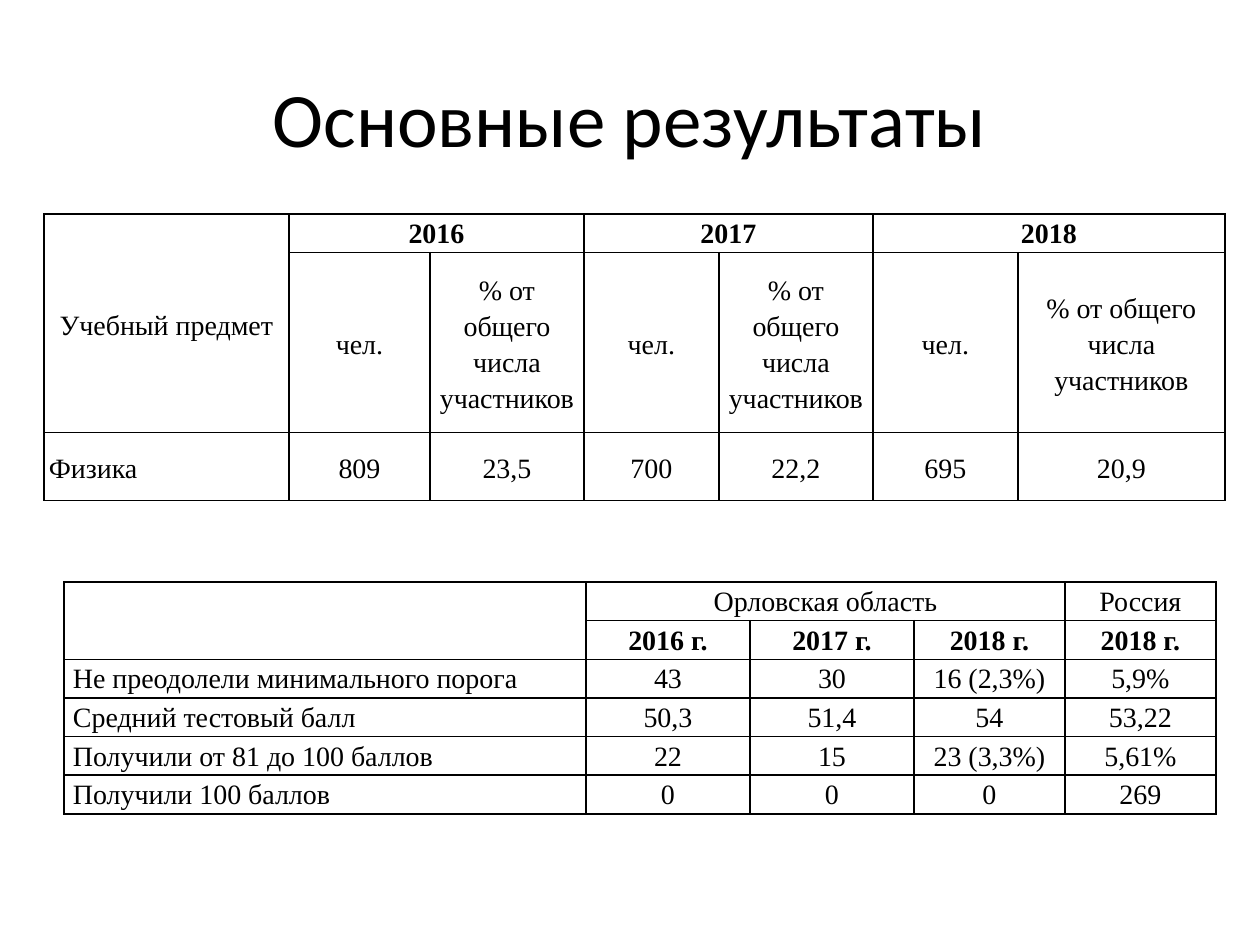
from lxml.etree import SubElement
from pptx import Presentation
from pptx.dml.color import RGBColor
from pptx.enum.text import MSO_ANCHOR, PP_ALIGN
from pptx.oxml.ns import qn
from pptx.util import Pt

EMU_PER_PX = 914400 / 126
COLORS = {"ink": "000000", "paper": "FFFFFF"}
SUBJECT_ROWS = [
    ["Учебный предмет", "2016", "", "2017", "", "2018", ""],
    [""] + ["чел.", "% от общего числа участников"] * 3,
    ["Физика", "809", "23,5", "700", "22,2", "695", "20,9"],
]
SCORE_ROWS = [
    ["", "Орловская область", "", "", "Россия"],
    ["", "2016 г.", "2017 г.", "2018 г.", "2018 г."],
    ["Не преодолели минимального порога", "43", "30", "16 (2,3%)", "5,9%"],
    ["Средний тестовый балл", "50,3", "51,4", "54", "53,22"],
    ["Получили от 81 до 100 баллов", "22", "15", "23 (3,3%)", "5,61%"],
    ["Получили 100 баллов", "0", "0", "0", "269"],
]


def px(length):
    """Turn pixels into EMU."""
    return round(length * EMU_PER_PX)


def style_paragraph(paragraph, font_name, size, align, bold=False):
    """Set the font and alignment of a paragraph."""
    paragraph.alignment = align
    font = paragraph.font
    font.name, font.size, font.bold = font_name, Pt(size), bold
    font.color.rgb = RGBColor.from_string(COLORS["ink"])


def add_title(slide, text, left, top, width, height):
    """Add the centred slide title."""
    title = slide.shapes.add_textbox(px(left), px(top), px(width), px(height))
    frame = title.text_frame
    frame.word_wrap = True
    frame.vertical_anchor = MSO_ANCHOR.MIDDLE
    frame.text = text
    style_paragraph(frame.paragraphs[0], "Calibri", 44, PP_ALIGN.CENTER)


def add_borders(cell):
    """Draw a thin line on all four sides of a cell."""
    properties = cell._tc.get_or_add_tcPr()
    for position, side in enumerate(("lnL", "lnR", "lnT", "lnB")):
        line = SubElement(properties, qn(f"a:{side}"), w=str(Pt(1)))
        fill = SubElement(line, qn("a:solidFill"))
        SubElement(fill, qn("a:srgbClr"), val=COLORS["ink"])
        properties.insert(position, line)


def fill_cell(cell, text, margin, anchor, align, bold):
    """Write and style one table cell."""
    cell.text = text
    cell.margin_left = cell.margin_right = px(margin)
    cell.margin_top = cell.margin_bottom = 0
    cell.vertical_anchor = anchor
    cell.fill.solid()
    cell.fill.fore_color.rgb = RGBColor.from_string(COLORS["paper"])
    add_borders(cell)
    paragraph = cell.text_frame.paragraphs[0]
    paragraph.line_spacing = 1.15
    style_paragraph(paragraph, "Times New Roman", 16, align, bold)


def add_grid(slide, rows, left, top, widths, heights, merges, margin,
             anchor, label_align, bold_row):
    """Add a bordered table with a two-row header and row labels."""
    grid = slide.shapes.add_table(
        len(rows), len(widths), px(left), px(top), px(sum(widths)), px(sum(heights))
    ).table
    for column, width in zip(grid.columns, widths):
        column.width = px(width)
    for row, height in zip(grid.rows, heights):
        row.height = px(height)
    for r, texts in enumerate(rows):
        for c, text in enumerate(texts):
            bold = r == bold_row and c > 0
            align = label_align if c == 0 and r > 1 else PP_ALIGN.CENTER
            cell_anchor = MSO_ANCHOR.TOP if bold else anchor
            fill_cell(grid.cell(r, c), text, margin, cell_anchor, align, bold)
    for first, last in merges:
        grid.cell(*first).merge(grid.cell(*last))


def main():
    """Build the results slide."""
    deck = Presentation()
    deck.slide_width, deck.slide_height = px(1260), px(945)
    slide = deck.slides.add_slide(deck.slide_layouts[6])
    add_title(slide, "Основные результаты", 63, 38, 1134, 158)
    add_grid(
        slide, SUBJECT_ROWS, 44, 214,
        widths=[245, 141, 154, 135, 154, 145, 207], heights=[36, 180, 68],
        merges=[((0, 0), (1, 0))] + [((0, c), (0, c + 1)) for c in (1, 3, 5)],
        margin=5, anchor=MSO_ANCHOR.MIDDLE, label_align=PP_ALIGN.LEFT, bold_row=0,
    )
    add_grid(
        slide, SCORE_ROWS, 64, 582,
        widths=[522, 164, 164, 151, 151], heights=[36] * len(SCORE_ROWS),
        merges=[((0, 0), (1, 0)), ((0, 1), (0, 3))],
        margin=9, anchor=MSO_ANCHOR.TOP, label_align=PP_ALIGN.JUSTIFY, bold_row=1,
    )
    deck.save("out.pptx")


if __name__ == "__main__":
    main()
